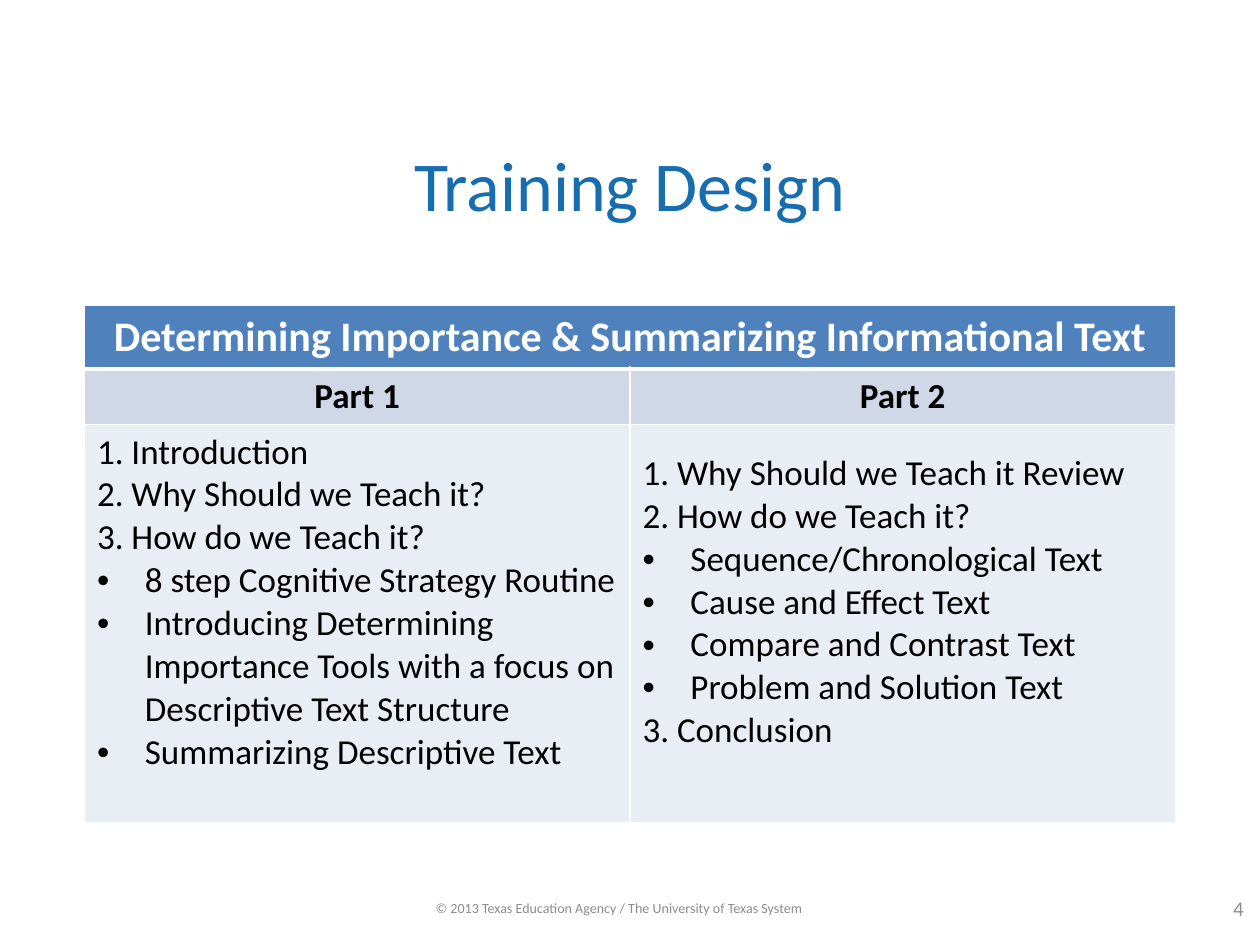
from dataclasses import dataclass

from lxml import etree
from pptx import Presentation
from pptx.dml.color import RGBColor
from pptx.enum.text import MSO_ANCHOR, PP_ALIGN
from pptx.oxml.ns import qn
from pptx.util import Inches, Pt

LEFT, CENTER = PP_ALIGN.LEFT, PP_ALIGN.CENTER
MIDDLE = MSO_ANCHOR.MIDDLE
TITLE_ONLY = 5


@dataclass(frozen=True)
class Theme:
    font: str = "Calibri"
    title: str = "176DAD"
    muted: str = "8C8C8C"
    text: str = "000000"
    white: str = "FFFFFF"
    header_fill: str = "4F81BD"
    part_fill: str = "D0D8E8"
    body_fill: str = "E9EDF4"
    title_size: int = 40
    header_size: int = 24
    body_size: int = 20
    number_size: int = 12
    footer_size: int = 8


THEME = Theme()
BULLET_INDENT = Inches(0.38)
ROW_HEIGHTS = (0.5, 0.44, 3.16)
HEADING = "Determining Importance & Summarizing Informational Text"

# Each agenda line is (text, is a bullet)
AGENDA = {
    "Part 1": [
        ("1. Introduction", False),
        ("2. Why Should we Teach it?", False),
        ("3. How do we Teach it?", False),
        ("8 step Cognitive Strategy Routine", True),
        ("Introducing Determining Importance Tools with a focus on "
         "Descriptive Text Structure", True),
        ("Summarizing Descriptive Text", True),
    ],
    "Part 2": [
        ("1. Why Should we Teach it Review", False),
        ("2. How do we Teach it?", False),
        ("Sequence/Chronological Text", True),
        ("Cause and Effect Text", True),
        ("Compare and Contrast Text", True),
        ("Problem and Solution Text", True),
        ("3. Conclusion", False),
    ],
}


def add_run(paragraph, text, size, color, bold=False, align=CENTER):
    paragraph.alignment = align
    run = paragraph.add_run()
    run.text = text
    run.font.name = THEME.font
    run.font.size = Pt(size)
    run.font.bold = bold
    run.font.color.rgb = RGBColor.from_string(color)


def add_bullet(paragraph):
    properties = paragraph._p.get_or_add_pPr()
    properties.set("marL", str(BULLET_INDENT))
    properties.set("indent", str(-BULLET_INDENT))
    etree.SubElement(properties, qn("a:buFont"), typeface="Arial")
    etree.SubElement(properties, qn("a:buChar"), char="•")


def style_cell(cell, fill, top=1, bottom=1):
    """Give a cell white borders (widths in points) and a solid fill."""
    properties = cell._tc.get_or_add_tcPr()
    for side, width in (("L", 1), ("R", 1), ("T", top), ("B", bottom)):
        line = etree.SubElement(properties, qn(f"a:ln{side}"), w=str(Pt(width)))
        solid = etree.SubElement(line, qn("a:solidFill"))
        etree.SubElement(solid, qn("a:srgbClr"), val=THEME.white)
    cell.fill.solid()
    cell.fill.fore_color.rgb = RGBColor.from_string(fill)
    cell.vertical_anchor = MIDDLE


def place_title(slide, box, text):
    title = slide.shapes.title
    title.left, title.top, title.width, title.height = map(Inches, box)
    title.text_frame.vertical_anchor = MIDDLE
    add_run(title.text_frame.paragraphs[0], text, THEME.title_size, THEME.title)


def place_agenda(slide, box):
    table = slide.shapes.add_table(3, len(AGENDA), *map(Inches, box)).table
    table.horz_banding = False
    for row, height in zip(table.rows, ROW_HEIGHTS):
        row.height = Inches(height)

    # Heading across all parts
    for cell in table.rows[0].cells:
        style_cell(cell, THEME.header_fill, bottom=3)
    heading = table.cell(0, 0)
    heading.merge(table.cell(0, len(AGENDA) - 1))
    add_run(heading.text_frame.paragraphs[0], HEADING,
            THEME.header_size, THEME.white, bold=True)

    # One column for each part
    for column, (part, lines) in enumerate(AGENDA.items()):
        label, body = table.cell(1, column), table.cell(2, column)
        style_cell(label, THEME.part_fill, top=3)
        add_run(label.text_frame.paragraphs[0], part,
                THEME.body_size, THEME.text, bold=True)

        style_cell(body, THEME.body_fill)
        body.margin_bottom = Inches(0.39)
        frame = body.text_frame
        for index, (text, bulleted) in enumerate(lines):
            paragraph = frame.add_paragraph() if index else frame.paragraphs[0]
            if bulleted:
                add_bullet(paragraph)
            add_run(paragraph, text, THEME.body_size, THEME.text, align=LEFT)


def place_note(slide, box, text, size):
    frame = slide.shapes.add_textbox(*map(Inches, box)).text_frame
    frame.word_wrap = True
    frame.vertical_anchor = MIDDLE
    add_run(frame.paragraphs[0], text, size, THEME.muted)


def main():
    presentation = Presentation()
    presentation.slide_width = Inches(10)
    presentation.slide_height = Inches(7.5)
    slide = presentation.slides.add_slide(presentation.slide_layouts[TITLE_ONLY])

    place_title(slide, (0.5, 1.04, 9, 0.84), "Training Design")
    place_agenda(slide, (0.67, 2.42, 8.66, sum(ROW_HEIGHTS)))

    # Footer and slide number
    place_note(slide, (2.08, 7.08, 5.67, 0.25),
               "© 2013 Texas Education Agency / The University of Texas System",
               THEME.footer_size)
    place_note(slide, (9.58, 7.07, 0.5, 0.27), "4", THEME.number_size)

    presentation.save("out.pptx")


if __name__ == "__main__":
    main()
